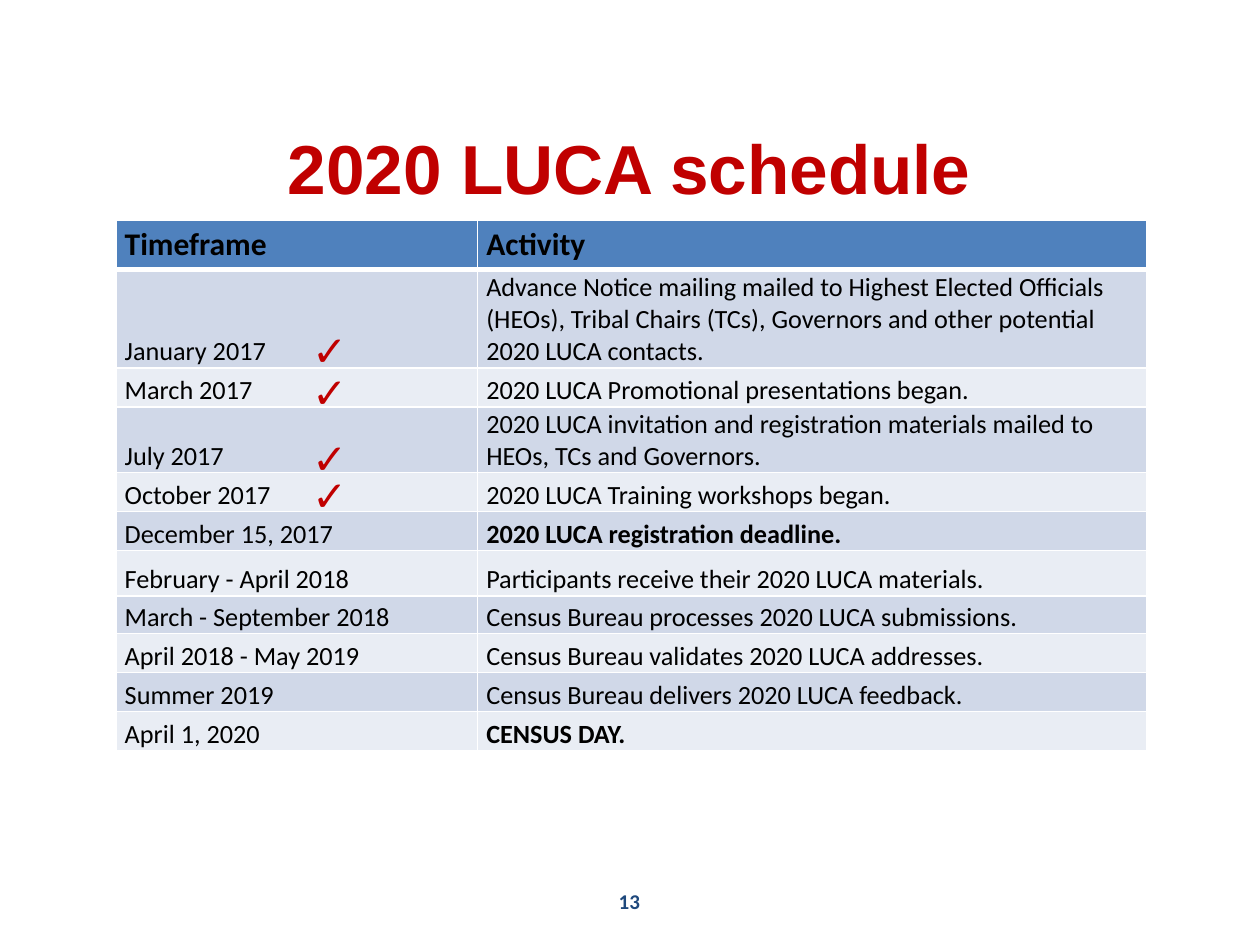
import dataclasses

import pptx
import pptx.dml.color
import pptx.enum.text
import pptx.oxml
import pptx.oxml.ns
import pptx.util

Inches = pptx.util.Inches
Align = pptx.enum.text.PP_ALIGN
Anchor = pptx.enum.text.MSO_ANCHOR

RED, NAVY, BLACK, WHITE = "C00000", "1F497D", "000000", "FFFFFF"
HEAD, BANDS = "4F81BD", ("D0D8E8", "E9EDF4")


@dataclasses.dataclass
class Step:
    when: str
    what: str
    high: float = 0.31
    bold: bool = False


STEPS = [
    Step("January 2017", "Advance Notice mailing mailed to Highest Elected Officials "
         "(HEOs), Tribal Chairs (TCs), Governors and other potential "
         "2020 LUCA contacts.", 0.78),
    Step("March 2017", "2020 LUCA Promotional presentations began."),
    Step("July 2017", "2020 LUCA invitation and registration materials mailed to "
         "HEOs, TCs and Governors.", 0.52),
    Step("October 2017", "2020 LUCA Training workshops began."),
    Step("December 15, 2017", "2020 LUCA registration deadline.", bold=True),
    Step("February - April 2018", "Participants receive their 2020 LUCA materials.", 0.36),
    Step("March - September 2018", "Census Bureau processes 2020 LUCA submissions.", 0.3),
    Step("April 2018 - May 2019", "Census Bureau validates 2020 LUCA addresses."),
    Step("Summer 2019", "Census Bureau delivers 2020 LUCA feedback."),
    Step("April 1, 2020", "CENSUS DAY.", bold=True),
]
TICKS = (2.53, 2.86, 3.38, 3.68)


def color(code: str) -> pptx.dml.color.RGBColor:
    return pptx.dml.color.RGBColor.from_string(code)


def write(frame, text: str, *, size: float, font: str = "Calibri", ink: str = BLACK,
          bold: bool = False, align=Align.LEFT) -> None:
    para = frame.paragraphs[0]
    para.alignment = align
    run = para.add_run()
    run.text = text
    run.font.size = pptx.util.Pt(size)
    run.font.name = font
    run.font.bold = bold
    run.font.color.rgb = color(ink)


def add_text(slide, text: str, left: float, top: float, width: float, height: float,
             anchor=Anchor.MIDDLE, **style) -> None:
    box = slide.shapes.add_textbox(Inches(left), Inches(top), Inches(width), Inches(height))
    box.text_frame.word_wrap = True
    box.text_frame.vertical_anchor = anchor
    write(box.text_frame, text, **style)


def edge(cell, base: float) -> None:
    """Draw white lines round a cell; base is the width of the lower one."""
    props = cell._tc.get_or_add_tcPr()
    sides = {"lnL": 1, "lnR": 1, "lnT": 1, "lnB": base}
    for spot, (side, wide) in enumerate(sides.items()):
        line = pptx.oxml.parse_xml(
            f'<a:{side} {pptx.oxml.ns.nsdecls("a")} w="{pptx.util.Pt(wide)}">'
            f'<a:solidFill><a:srgbClr val="{WHITE}"/></a:solidFill></a:{side}>')
        props.insert(spot, line)


def fill_cell(cell, text: str, fill: str, head: bool, bold: bool) -> None:
    cell.margin_left = Inches(0.07)
    cell.margin_right = Inches(0.07 if head else 0.01)
    cell.margin_top = Inches(0.04 if head else 0.01)
    cell.margin_bottom = Inches(0.04 if head else 0)
    cell.vertical_anchor = Anchor.TOP if head else Anchor.BOTTOM
    cell.fill.solid()
    cell.fill.fore_color.rgb = color(fill)
    edge(cell, 3 if head else 1)
    write(cell.text_frame, text, size=18 if head else 15, bold=bold)


def add_plan(slide, steps: list[Step]) -> None:
    rows = [Step("Timeframe", "Activity", 0.39, True), *steps]
    grid = slide.shapes.add_table(len(rows), 2, Inches(0.92), Inches(1.75),
                                  Inches(8.18), Inches(4.19)).table
    for col, wide in zip(grid.columns, (2.87, 5.31)):
        col.width = Inches(wide)
    for num, step in enumerate(rows):
        head = num == 0
        fill = HEAD if head else BANDS[(num - 1) % 2]
        grid.rows[num].height = Inches(step.high)
        fill_cell(grid.cell(num, 0), step.when, fill, head, head)
        fill_cell(grid.cell(num, 1), step.what, fill, head, step.bold)


def main() -> None:
    deck = pptx.Presentation()
    deck.slide_width, deck.slide_height = Inches(10), Inches(7.5)
    slide = deck.slides.add_slide(deck.slide_layouts[6])

    # Title
    add_text(slide, "2020 LUCA schedule", 1.62, 0.96, 6.75, 0.73,
             size=39.6, font="Arial", ink=RED, bold=True, align=Align.CENTER)

    # Schedule, with ticks on the finished steps
    add_plan(slide, STEPS)
    for top in TICKS:
        add_text(slide, "✓", 2.38, top, 0.6, 0.5, Anchor.TOP, size=24, ink=RED)

    # Page number
    add_text(slide, "13", 3.83, 6.95, 2.33, 0.4,
             size=12, ink=NAVY, bold=True, align=Align.CENTER)

    deck.save("out.pptx")


if __name__ == "__main__":
    main()
